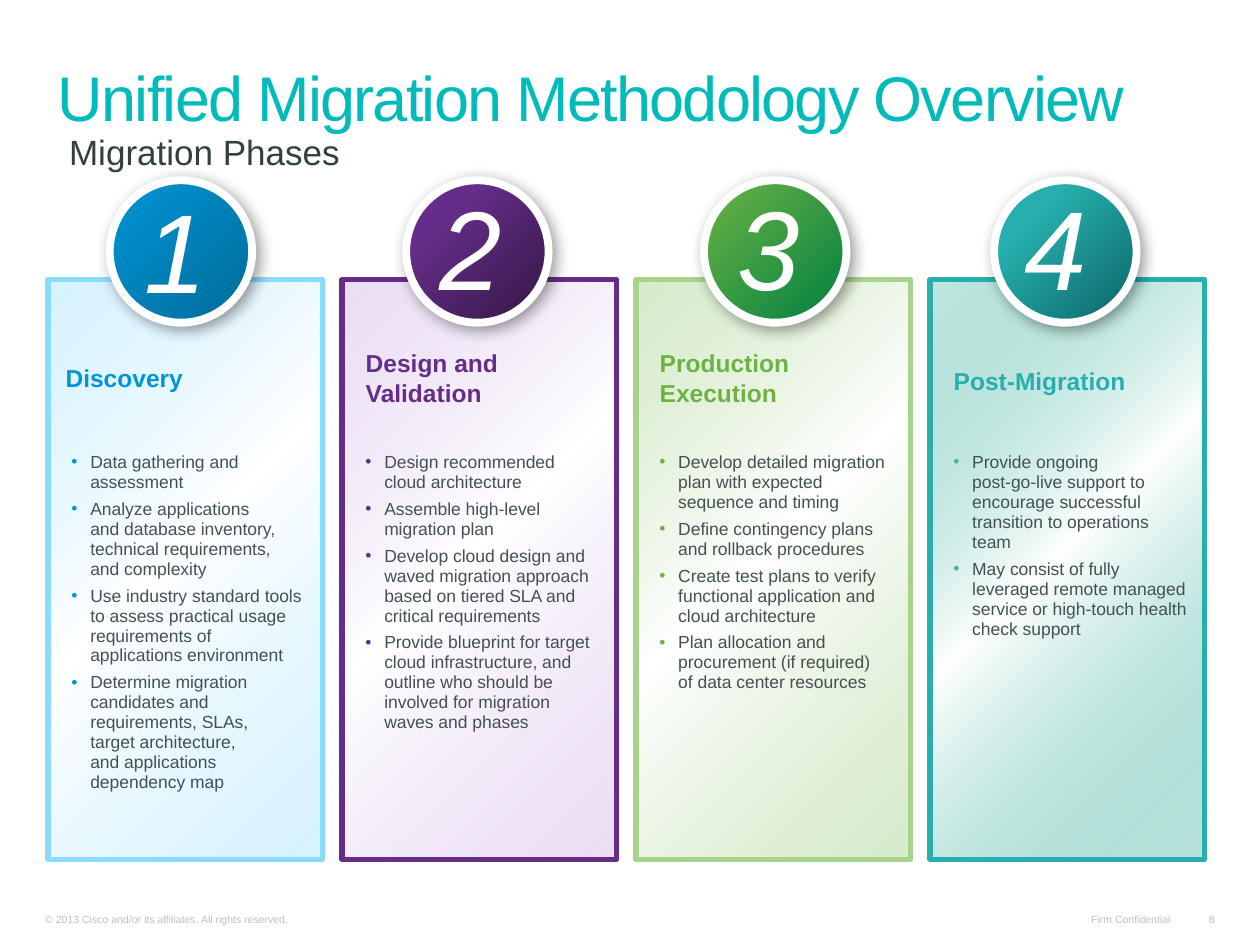
from dataclasses import dataclass

from lxml import etree
from pptx import Presentation
from pptx.dml.color import RGBColor
from pptx.enum import shapes, text
from pptx.oxml import ns
from pptx.util import Pt


@dataclass(frozen=True)
class Theme:
    """Colours, font and type sizes of the slide."""
    font: str = "Arial"
    title: str = "01BBBB"
    subtitle: str = "334041"
    body: str = "435153"
    footer: str = "C0C0C0"
    white: str = "FFFFFF"
    shadow: str = "000000"
    title_size: int = 36
    subtitle_size: int = 20
    number_size: int = 64
    heading_size: int = 14
    body_size: int = 10
    footer_size: int = 6


@dataclass(frozen=True)
class Phase:
    """Content, colours and small placement offsets of one phase."""
    heading: str
    items: tuple
    accent: str
    bullet: str
    border: str
    card_stops: tuple
    badge_stops: tuple
    badge_dx: float
    number_shift: tuple = (-3.6, -4.3)
    heading_shift: tuple = (6.5, 0)
    body_width: float = 150


THEME = Theme()


def tinted(colour, start=68, end=68):
    """Return card stops that fade from a tint to white and back."""
    return ((0, colour, start), (47, THEME.white, 100), (100, colour, end))


PHASES = (
    Phase("Discovery",
          ("Data gathering and assessment",
           "Analyze applications\nand database inventory, technical requirements, and complexity",
           "Use industry standard tools to assess practical usage requirements of "
           "applications environment",
           "Determine migration candidates and requirements, SLAs,\ntarget architecture,\n"
           "and applications dependency map"),
          "0096D6", "0096D6", "89DCFF", tinted("C4EDFF"),
          ((0, "0096D6", 100), (89, "0070A0", 100)),
          35.3, (-3.2, -2.9), (3, 0), 146),
    Phase("Design and Validation",
          ("Design recommended\ncloud architecture",
           "Assemble high-level migration plan",
           "Develop cloud design and waved migration approach based on tiered SLA and "
           "critical requirements",
           "Provide blueprint for target cloud infrastructure, and outline who should be "
           "involved for migration\nwaves and phases"),
          "652D89", "652D89", "652D89", tinted("E2CEEF"),
          ((26, "652D89", 100), (100, "331744", 100)), 36.7),
    Phase("Production Execution",
          ("Develop detailed migration plan with expected sequence and timing",
           "Define contingency plans and rollback procedures",
           "Create test plans to verify functional application and cloud architecture",
           "Plan allocation and procurement (if required)\nof data center resources"),
          "6DB344", "6DB344", "A7D48D", tinted("C4E2B3"),
          ((0, "6DB344", 100), (100, "008041", 100)), 38.9),
    Phase("Post-Migration",
          ("Provide ongoing\npost-go-live support to encourage successful transition to "
           "operations team",
           "May consist of fully leveraged remote managed service or high-touch health "
           "check support"),
          "26AFAE", "41B5A1", "26AFAE", tinted("41B5A1", 32, 37),
          ((26, "26AFAE", 100), (100, "0C6467", 100)),
          36.7, (-5.8, -4.3), (6.5, 2)),
)


def add_colour(parent, colour, opacity):
    """Append a colour with an opacity in percent to an XML element."""
    element = etree.SubElement(parent, ns.qn("a:srgbClr"), val=colour)
    if opacity < 100:
        etree.SubElement(element, ns.qn("a:alpha"), val=str(opacity * 1000))


def style_font(paragraph, size, colour, bold=None, italic=None):
    """Set the font of a whole paragraph."""
    font = paragraph.font
    font.name, font.size, font.bold, font.italic = THEME.font, Pt(size), bold, italic
    font.color.rgb = RGBColor.from_string(colour)


def add_gradient_shape(parent, kind, box, stops, border, weight):
    """Add a shape with a diagonal gradient and a solid outline."""
    shape = parent.add_shape(kind, *map(Pt, box))
    shape.shadow.inherit = False
    shape.fill.gradient()
    gradient = shape._element.spPr.find(ns.qn("a:gradFill"))
    stop_list = gradient.find(ns.qn("a:gsLst"))
    for stop in list(stop_list):
        stop_list.remove(stop)
    for position, colour, opacity in stops:
        stop = etree.SubElement(stop_list, ns.qn("a:gs"), pos=str(position * 1000))
        add_colour(stop, colour, opacity)
    gradient.find(ns.qn("a:lin")).set("ang", str(45 * 60000))
    shape.line.color.rgb = RGBColor.from_string(border)
    shape.line.width = Pt(weight)
    return shape


def add_label(parent, box, words, size, colour, align=text.PP_ALIGN.LEFT,
              anchor=text.MSO_ANCHOR.TOP, wrap=True, bold=None, italic=None):
    """Add a text box holding one paragraph."""
    label = parent.add_textbox(*map(Pt, box))
    frame = label.text_frame
    frame.word_wrap, frame.vertical_anchor = wrap, anchor
    paragraph = frame.paragraphs[0]
    paragraph.text, paragraph.alignment = words, align
    style_font(paragraph, size, colour, bold, italic)
    return label


def add_badge(slide, box, number, phase):
    """Add the round numbered badge of a phase."""
    left, top, width, height = box
    group = slide.shapes.add_group_shape()
    circle = add_gradient_shape(group.shapes, shapes.MSO_SHAPE.OVAL, box,
                                phase.badge_stops, THEME.white, 4.5)
    effects = circle._element.spPr.find(ns.qn("a:effectLst"))
    shadow = etree.SubElement(effects, ns.qn("a:outerShdw"), blurRad=str(Pt(8.8)),
                              dist=str(Pt(3)), dir=str(45 * 60000), algn="tl",
                              rotWithShape="0")
    add_colour(shadow, THEME.shadow, 40)
    dx, dy = phase.number_shift
    add_label(group.shapes, (left + dx, top + dy, width, height + 3.6), str(number),
              THEME.number_size, THEME.white, text.PP_ALIGN.CENTER, italic=True)


def add_bullets(slide, box, phase):
    """Add the bulleted activities of a phase."""
    frame = slide.shapes.add_textbox(*map(Pt, box)).text_frame
    frame.word_wrap = True
    for index, item in enumerate(phase.items):
        paragraph = frame.add_paragraph() if index else frame.paragraphs[0]
        paragraph.text = item
        paragraph.line_spacing = 0.95
        if index:
            paragraph.space_before = Pt(4)
        properties = paragraph._p.get_or_add_pPr()
        properties.set("marL", str(Pt(10.8)))
        properties.set("indent", str(-Pt(10.8)))
        add_colour(etree.SubElement(properties, ns.qn("a:buClr")), phase.bullet, 100)
        etree.SubElement(properties, ns.qn("a:buFont"), typeface=THEME.font)
        etree.SubElement(properties, ns.qn("a:buChar"), char="•")
        style_font(paragraph, THEME.body_size, THEME.body)


def add_phase(slide, box, number, phase):
    """Add one phase column: card, badge, heading and bullets."""
    left, top, width, height = box
    card = add_gradient_shape(slide.shapes, shapes.MSO_SHAPE.ROUNDED_RECTANGLE, box,
                              phase.card_stops, phase.border, 3)
    card.adjustments[0] = 0
    add_badge(slide, (left + phase.badge_dx, top - 56.8, 81.4, 81.4), number, phase)
    dx, dy = phase.heading_shift
    add_label(slide.shapes, (left + dx, top + 35.5 + dy, 143.3, 41), phase.heading,
              THEME.heading_size, phase.accent, anchor=text.MSO_ANCHOR.MIDDLE, bold=True)
    add_bullets(slide, (left + 6.3, top + 95, phase.body_width, height - 96), phase)


def add_header(slide, box):
    """Place the title placeholder and the subtitle under it."""
    left, top, width, height = box
    title = slide.shapes.title
    title.left, title.top, title.width, title.height = map(Pt, box)
    frame = title.text_frame
    frame.word_wrap, frame.vertical_anchor = True, text.MSO_ANCHOR.BOTTOM
    frame.auto_size = text.MSO_AUTO_SIZE.NONE
    frame.margin_left = frame.margin_right = Pt(6.5)
    paragraph = frame.paragraphs[0]
    paragraph.text = "Unified Migration Methodology Overview"
    paragraph.alignment, paragraph.line_spacing = text.PP_ALIGN.LEFT, 0.8
    style_font(paragraph, THEME.title_size, THEME.title)
    paragraph.runs[0].font._element.set("spc", "-100")
    add_label(slide.shapes, (left + 5.8, top + 57.6, 170.6, 31.7), "Migration Phases",
              THEME.subtitle_size, THEME.subtitle, wrap=False)


def add_footer(slide, box):
    """Add the copyright line, the confidentiality mark and the slide number."""
    left, top, width, height = box
    right = left + width
    for x, span, words, align in (
            (left, 269.3, "© 2013 Cisco and/or its affiliates. All rights reserved.",
             text.PP_ALIGN.LEFT),
            (right - 87.8, 62.6, "Firm Confidential", text.PP_ALIGN.RIGHT),
            (right - 20.2, 20.2, "8", text.PP_ALIGN.RIGHT)):
        label = add_label(slide.shapes, (x, top, span, height), words, THEME.footer_size,
                          THEME.footer, align, text.MSO_ANCHOR.BOTTOM, wrap=False)
        frame = label.text_frame
        frame.margin_left = frame.margin_right = Pt(6.5)
        frame.margin_top = frame.margin_bottom = Pt(3)


def main():
    """Build the migration phases slide."""
    presentation = Presentation()
    presentation.slide_width, presentation.slide_height = Pt(720), Pt(540)
    slide = presentation.slides.add_slide(presentation.slide_layouts[5])
    add_header(slide, (26.6, 13.7, 676, 66.2))
    for index, phase in enumerate(PHASES):
        add_phase(slide, (27.4 + index * 168, 159.8, 157, 331.2), index + 1, phase)
    add_footer(slide, (19.4, 518.4, 681.2, 13.7))
    presentation.save("out.pptx")


if __name__ == "__main__":
    main()
